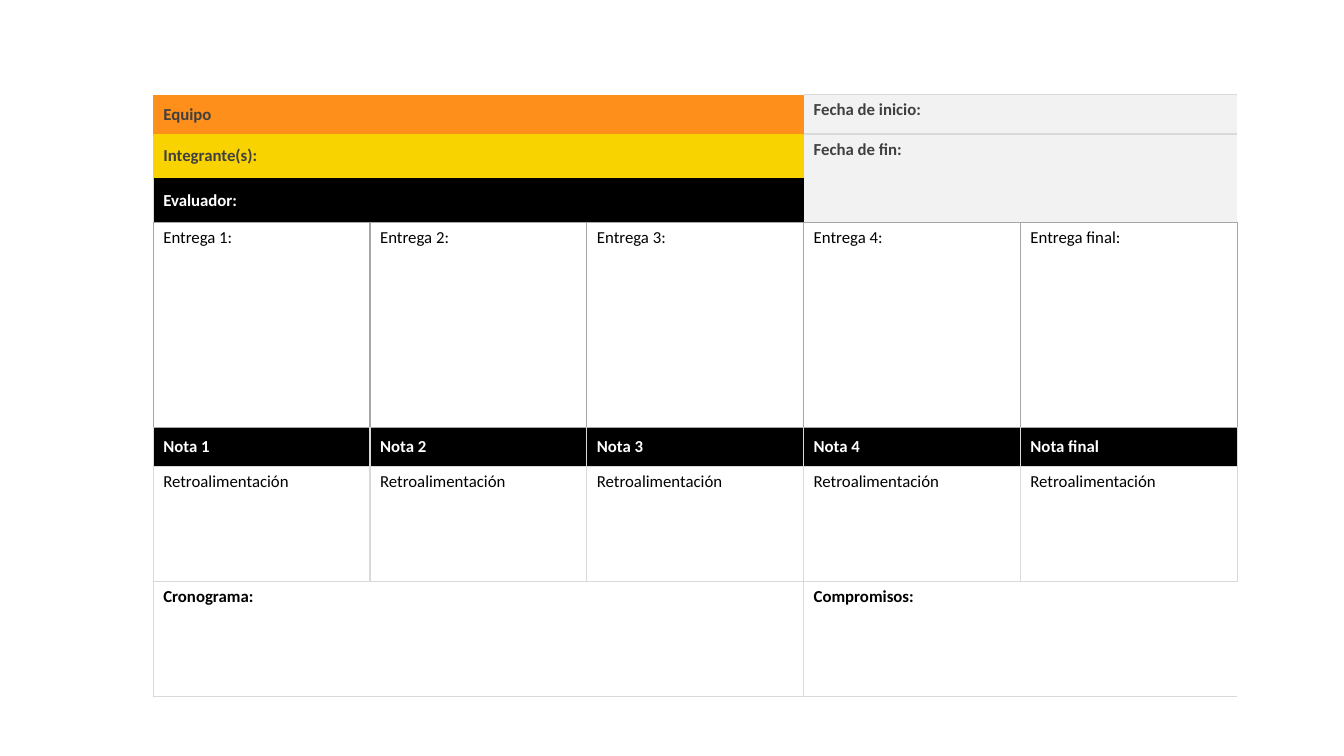
from lxml import etree
from pptx import Presentation
from pptx.dml.color import RGBColor
from pptx.enum import text
from pptx.oxml.ns import qn
from pptx.util import Inches, Pt

BLACK = RGBColor(0x00, 0x00, 0x00)
WHITE = RGBColor(0xFF, 0xFF, 0xFF)
CHARCOAL = RGBColor(0x40, 0x40, 0x40)
ORANGE = RGBColor(0xFF, 0x8F, 0x1B)
YELLOW = RGBColor(0xF8, 0xD3, 0x00)
PALE = RGBColor(0xF2, 0xF2, 0xF2)
LIGHT = RGBColor(0xD9, 0xD9, 0xD9)
GREY = RGBColor(0xA6, 0xA6, 0xA6)

COLUMNS = 5
ROW_HEIGHTS = [0.39, 0.44, 0.44, 2.03, 0.39, 1.14, 1.14]
DELIVERIES = ["1", "2", "3", "4", "final"]
LIGHT_EDGES = dict(L=LIGHT, R=LIGHT, T=LIGHT, B=LIGHT)
GREY_EDGES = dict(L=GREY, R=GREY, T=GREY, B=GREY)
NOTE_EDGES = dict(LIGHT_EDGES, T=GREY)


def draw_edges(cell, edges):
    """Borders go before the fill in the cell properties."""
    properties = cell._tc.get_or_add_tcPr()
    for side in "LRTB":
        line = etree.SubElement(properties, qn(f"a:ln{side}"), w=str(Pt(1)))
        if side in edges:
            solid = etree.SubElement(line, qn("a:solidFill"))
            etree.SubElement(solid, qn("a:srgbClr"), val=str(edges[side]))
        else:
            etree.SubElement(line, qn("a:noFill"))


def fill_cell(table, row, column, label, edges, fill=None, color=BLACK,
              bold=False, middle=False, span=(1, 1)):
    last_row, last_column = row + span[0] - 1, column + span[1] - 1
    cell = table.cell(row, column)
    if span != (1, 1):
        cell.merge(table.cell(last_row, last_column))

    # Each covered cell keeps only the outer edges of the span
    for r in range(row, last_row + 1):
        for c in range(column, last_column + 1):
            outer = dict(L=c == column, R=c == last_column,
                         T=r == row, B=r == last_row)
            part = table.cell(r, c)
            draw_edges(part, {side: shade for side, shade in edges.items()
                              if outer[side]})
            if fill is None:
                part.fill.background()
            else:
                part.fill.solid()
                part.fill.fore_color.rgb = fill

    cell.vertical_anchor = text.MSO_ANCHOR.MIDDLE if middle else text.MSO_ANCHOR.TOP
    para = cell.text_frame.paragraphs[0]
    para.text = label
    para.font.name = "Calibri"
    para.font.size = Pt(12)
    para.font.bold = bold
    para.font.color.rgb = color


def fill_header(table):
    # Team, members and evaluator
    bands = [("Equipo", ORANGE, CHARCOAL, {}),
             ("Integrante(s):", YELLOW, CHARCOAL, {}),
             ("Evaluador:", BLACK, WHITE, dict(L=LIGHT, R=LIGHT, B=GREY))]
    for row, (label, fill, color, edges) in enumerate(bands):
        fill_cell(table, row, 0, label, edges, fill, color,
                  bold=True, middle=True, span=(1, 3))

    # Start and end dates
    fill_cell(table, 0, 3, "Fecha de inicio:", dict(T=LIGHT, R=LIGHT, B=LIGHT),
              PALE, CHARCOAL, bold=True, span=(1, 2))
    fill_cell(table, 1, 3, "Fecha de fin:", dict(T=LIGHT, R=LIGHT, B=GREY),
              PALE, CHARCOAL, bold=True, span=(2, 2))


def fill_deliveries(table):
    for column, name in enumerate(DELIVERIES):
        fill_cell(table, 3, column, f"Entrega {name}:", GREY_EDGES)
        fill_cell(table, 4, column, f"Nota {name}", NOTE_EDGES, BLACK, WHITE,
                  bold=True, middle=True)
        fill_cell(table, 5, column, "Retroalimentación", LIGHT_EDGES)


def fill_footer(table):
    fill_cell(table, 6, 0, "Cronograma:", LIGHT_EDGES, bold=True, span=(1, 3))
    fill_cell(table, 6, 3, "Compromisos:", LIGHT_EDGES, bold=True, span=(1, 2))


def add_evaluation_table(page, left, top, width):
    frame = page.shapes.add_table(len(ROW_HEIGHTS), COLUMNS, Inches(left), Inches(top),
                                  Inches(width), Inches(sum(ROW_HEIGHTS)))
    table = frame.table
    table.first_row = table.horz_banding = False
    for column in table.columns:
        column.width = Inches(width / COLUMNS)
    for row, height in zip(table.rows, ROW_HEIGHTS):
        row.height = Inches(height)
    fill_header(table)
    fill_deliveries(table)
    fill_footer(table)


def main():
    deck = Presentation()
    deck.slide_width, deck.slide_height = Inches(13.33), Inches(7.5)
    page = deck.slides.add_slide(deck.slide_layouts[6])
    add_evaluation_table(page, 1.52, 0.94, 10.75)
    deck.save("out.pptx")


if __name__ == "__main__":
    main()
